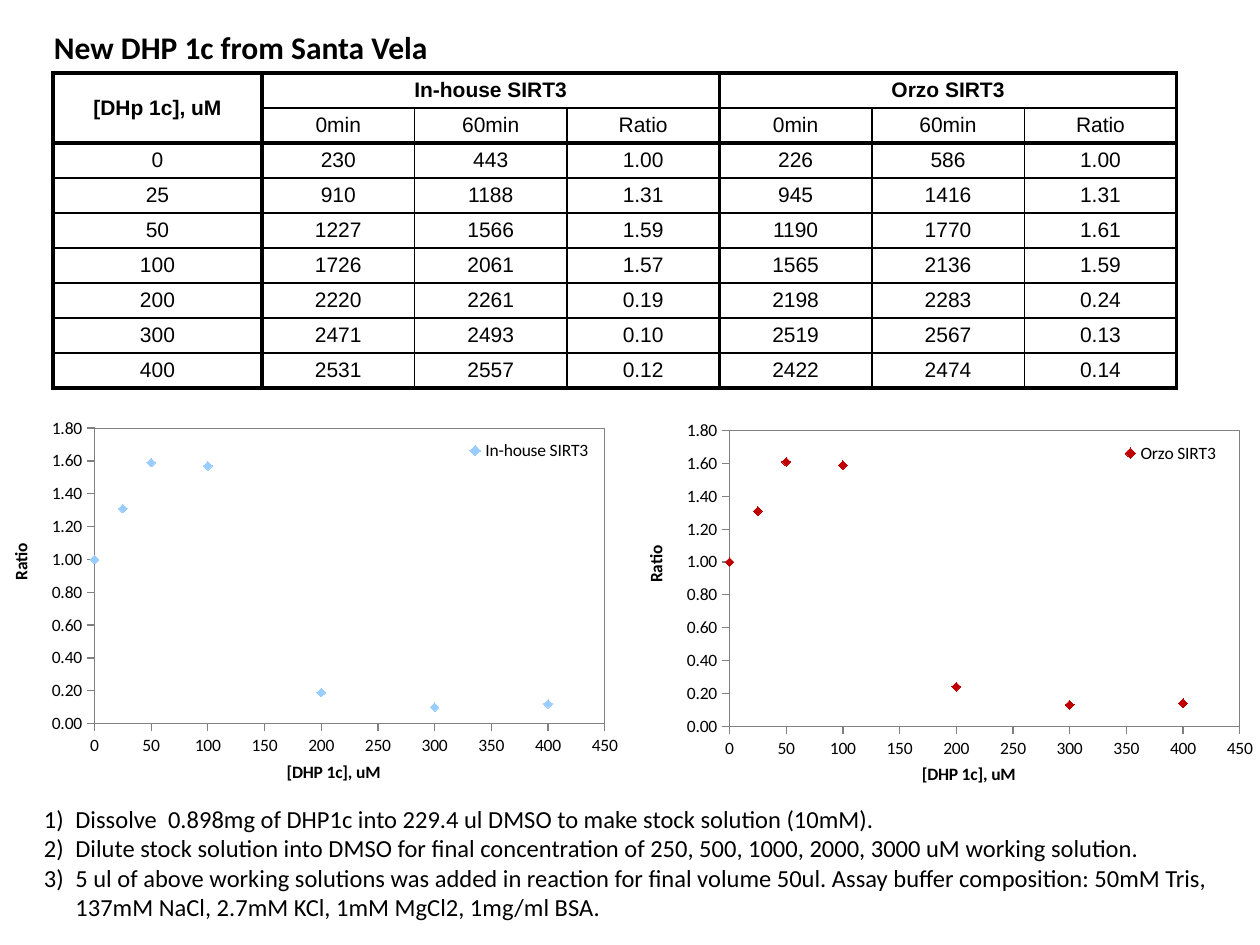
from lxml import etree
from pptx import Presentation
from pptx import util as u
from pptx.chart import data as cd
from pptx.dml.color import RGBColor
from pptx.enum import chart as ch, text as tx
from pptx.oxml import ns

HUES = {"ink": "000000", "axis": "808080", "house": "99CCFF", "enzyme": "C00000"}
HEAVY, THIN = 2.25, 1

DOSES = [0, 25, 50, 100, 200, 300, 400]
HOUSE = [(230, 443, 1.00), (910, 1188, 1.31), (1227, 1566, 1.59), (1726, 2061, 1.57),
         (2220, 2261, 0.19), (2471, 2493, 0.10), (2531, 2557, 0.12)]
KIT = [(226, 586, 1.00), (945, 1416, 1.31), (1190, 1770, 1.61), (1565, 2136, 1.59),
       (2198, 2283, 0.24), (2519, 2567, 0.13), (2422, 2474, 0.14)]
STEPS = [
    "Dissolve  0.898mg of DHP1c into 229.4 ul DMSO to make stock solution (10mM).",
    "Dilute stock solution into DMSO for final concentration of 250, 500, 1000, 2000, 3000 uM "
    "working solution.",
    "5 ul of above working solutions was added in reaction for final volume 50ul. Assay buffer "
    "composition: 50mM Tris, 137mM NaCl, 2.7mM KCl, 1mM MgCl2, 1mg/ml BSA.",
]


def hue(key):
    return RGBColor.from_string(HUES[key])


def put(item, **vals):
    for key, val in vals.items():
        setattr(item, key, val)


def sub(top, tag, **attrs):
    return etree.SubElement(top, ns.qn(tag), {k: str(v) for k, v in attrs.items()})


def place(node, inner=False, **shares):
    """Give a chart part a manual layout in shares of the chart."""
    for old in node.findall(ns.qn("c:layout")):
        node.remove(old)
    lay = etree.Element(ns.qn("c:layout"))
    man = sub(lay, "c:manualLayout")
    if inner:
        sub(man, "c:layoutTarget", val="inner")
    for key in "xy":
        sub(man, f"c:{key}Mode", val="edge")
    for key, val in shares.items():
        sub(man, f"c:{key}", val=val)
    over = node.find(ns.qn("c:overlay"))
    node.insert(0 if over is None else node.index(over), lay)


class Sheet:
    """A slide whose boxes are given in percent of its width and height."""

    def __init__(self, wide=10, high=7.5):
        self.deck = Presentation()
        self.wide, self.high = u.Inches(wide), u.Inches(high)
        put(self.deck, slide_width=self.wide, slide_height=self.high)
        self.slide = self.deck.slides.add_slide(self.deck.slide_layouts[6])

    def box(self, left, top, wide, high):
        return [int(share * full / 100) for share, full in
                zip((left, top, wide, high), (self.wide, self.high) * 2)]

    def font(self, font, size, bold=False, name="Calibri"):
        put(font, size=u.Pt(size), bold=bold, name=name)
        font.color.rgb = hue("ink")

    def text(self, area, lines, size, bold=False, wrap=True, count=False):
        frame = self.slide.shapes.add_textbox(*self.box(*area)).text_frame
        put(frame, word_wrap=wrap, auto_size=tx.MSO_AUTO_SIZE.SHAPE_TO_FIT_TEXT)
        for i, line in enumerate(lines):
            para = frame.paragraphs[0] if i == 0 else frame.add_paragraph()
            run = para.add_run()
            run.text = line
            self.font(run.font, size, bold)
            if count:
                props = para._p.get_or_add_pPr()
                put_off = u.Inches(0.25)
                props.set("marL", str(put_off))
                props.set("indent", str(-put_off))
                sub(props, "a:buAutoNum", type="arabicParenR")

    def edges(self, cell, row, col, bars, rules):
        """Border a cell: heavy on the grid lines named in bars and rules."""
        props = cell._tc.get_or_add_tcPr()
        sides = [("L", col, bars), ("R", col + cell.span_width, bars),
                 ("T", row, rules), ("B", row + cell.span_height, rules)]
        for i, (side, spot, thick) in enumerate(sides):
            size = u.Pt(HEAVY if spot in thick else THIN)
            line = sub(props, f"a:ln{side}", w=int(size))
            sub(sub(line, "a:solidFill"), "a:srgbClr", val=HUES["ink"])
            props.insert(i, line)

    def table(self, area, rows, widths, merges, bars, rules):
        grid = self.slide.shapes.add_table(len(rows), len(widths), *self.box(*area)).table
        put(grid, first_row=False, horz_banding=False)
        for col, wide in zip(grid.columns, widths):
            col.width = u.Inches(wide)
        for r, c, last_r, last_c in merges:
            grid.cell(r, c).merge(grid.cell(last_r, last_c))
        for r, row in enumerate(rows):
            for c, word in enumerate(row):
                cell = grid.cell(r, c)
                if cell.is_spanned:
                    continue
                put(cell, margin_left=0, margin_right=0, margin_top=0, margin_bottom=0,
                    vertical_anchor=tx.MSO_ANCHOR.MIDDLE)
                para = cell.text_frame.paragraphs[0]
                para.alignment = tx.PP_ALIGN.CENTER
                run = para.add_run()
                run.text = word
                self.font(run.font, 12, r == 0, "Arial")
                cell.fill.background()
                self.edges(cell, r, c, bars, rules)

    def axis(self, axis, title, top, step, form, **spot):
        put(axis, has_major_gridlines=False, minimum_scale=0, maximum_scale=top,
            major_unit=step, major_tick_mark=ch.XL_TICK_MARK.OUTSIDE,
            minor_tick_mark=ch.XL_TICK_MARK.NONE)
        put(axis.tick_labels, number_format=form, number_format_is_linked=False)
        self.font(axis.tick_labels.font, 10)
        axis.format.line.color.rgb = hue("axis")
        run = axis.axis_title.text_frame.paragraphs[0].add_run()
        run.text = title
        self.font(run.font, 10, True)
        place(axis.axis_title._element, **spot)

    def scatter(self, area, name, points, key, legend):
        data = cd.XyChartData()
        line = data.add_series(name)
        for x, y in points:
            line.add_data_point(x, y)
        chart = self.slide.shapes.add_chart(
            ch.XL_CHART_TYPE.XY_SCATTER, *self.box(*area), data).chart
        put(chart, has_title=False, has_legend=True)
        self.font(chart.font, 10)
        put(chart.legend, position=ch.XL_LEGEND_POSITION.RIGHT, include_in_layout=True)
        place(chart.legend._element, x=legend, y=0.07, w=0.22, h=0.08)

        plot = chart.plots[0]
        plot.vary_by_categories = False
        series = plot.series[0]
        series.smooth = False
        series.format.line.fill.background()
        put(series.marker, style=ch.XL_MARKER_STYLE.DIAMOND, size=5)
        series.marker.format.fill.solid()
        series.marker.format.fill.fore_color.rgb = hue(key)
        series.marker.format.line.color.rgb = hue(key)

        self.axis(chart.category_axis, "[DHP 1c], uM", 450, 50, "0", x=0.45, y=0.93)
        self.axis(chart.value_axis, "Ratio", 1.8, 0.2, "0.00", x=0.01, y=0.35)
        pane = chart._chartSpace.chart.plotArea
        place(pane, inner=True, x=0.15, y=0.05, w=0.81, h=0.79)
        frame = sub(sub(pane, "c:spPr"), "a:ln", w=int(u.Pt(0.75)))
        sub(sub(frame, "a:solidFill"), "a:srgbClr", val=HUES["axis"])


def main():
    sheet = Sheet()
    house, kit = "In-house SIRT3", "Orzo SIRT3"
    rows = [["[DHp 1c], uM", house, "", "", kit, "", ""],
            [""] + ["0min", "60min", "Ratio"] * 2]
    for dose, *pair in zip(DOSES, HOUSE, KIT):
        rows.append([str(dose)] + [word for start, end, ratio in pair
                                   for word in (str(start), str(end), f"{ratio:.2f}")])
    sheet.table((4.2, 7.73, 89.2, 33.33), rows, [1.66] + [1.21] * 6,
                merges=[(0, 0, 1, 0), (0, 1, 0, 3), (0, 4, 0, 6)],
                bars=(0, 1, 4, 7), rules=(0, 2, len(rows)))
    sheet.text((3.3, 2.27, 32.1, 5.33), ["New DHP 1c from Santa Vela"], 18, bold=True, wrap=False)
    for area, name, runs, key, legend in [
            ((0, 43.33, 50, 40), house, HOUSE, "house", 0.73),
            ((50.4, 43.6, 50, 40), kit, KIT, "enzyme", 0.74)]:
        points = [(dose, run[-1]) for dose, run in zip(DOSES, runs)]
        sheet.scatter(area, name, points, key, legend)
    sheet.text((2.5, 84.4, 95.8, 13.87), STEPS, 14, count=True)
    sheet.deck.save("out.pptx")


if __name__ == "__main__":
    main()
